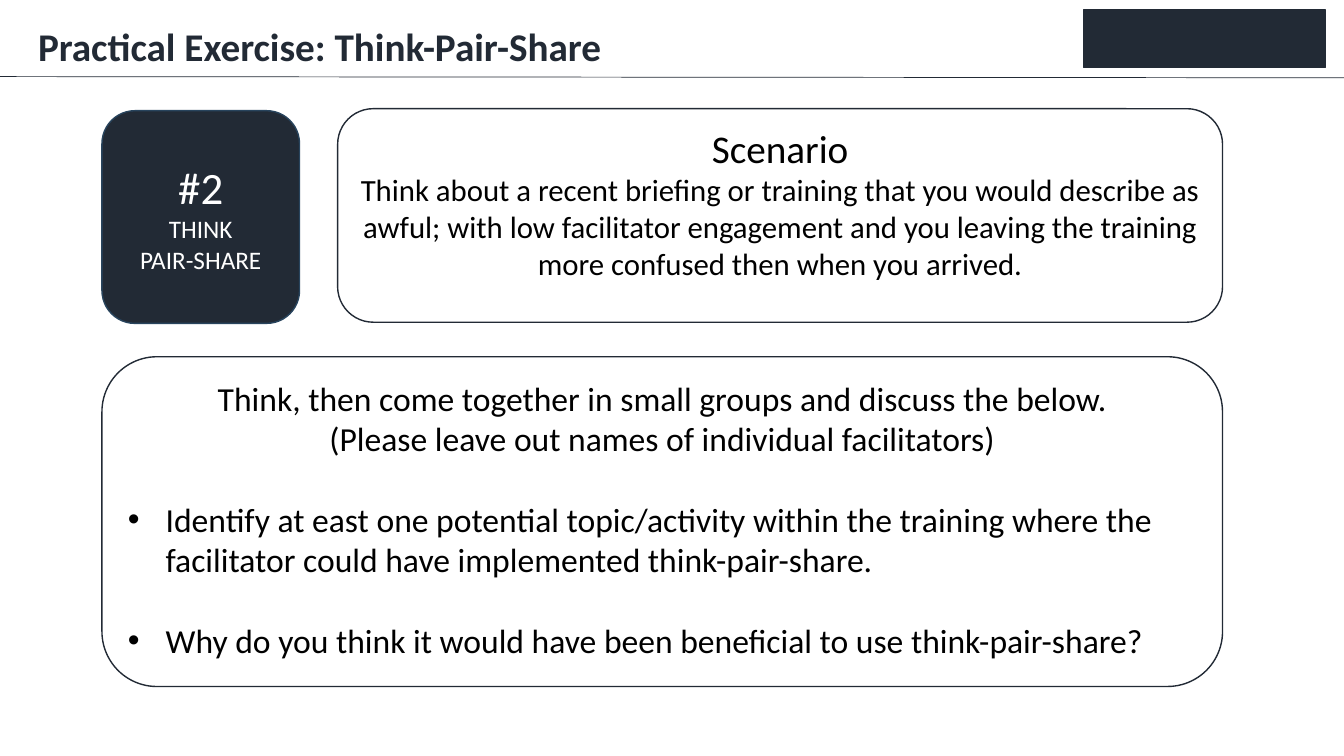
"""Build the think-pair-share exercise slide."""
from dataclasses import dataclass

from lxml.etree import SubElement as Sub
from pptx import Presentation as Deck
from pptx.dml.color import RGBColor as Rgb
from pptx.enum.shapes import MSO_CONNECTOR as Link, MSO_SHAPE as Form
from pptx.enum.text import MSO_ANCHOR as Anchor, PP_ALIGN as Align
from pptx.oxml.ns import qn
from pptx.util import Cm, Pt


@dataclass(frozen=True)
class Theme:
    navy: Rgb = Rgb(0x22, 0x2A, 0x35)
    edge: Rgb = Rgb(0x28, 0x44, 0x5D)
    black: Rgb = Rgb(0, 0, 0)
    white: Rgb = Rgb(255, 255, 255)
    font: str = "Calibri"
    huge: int = 32
    title: int = 28
    task: int = 24
    scene: int = 22
    label: int = 18
    gap: int = 29


THEME = Theme()


def write(frame, lines, color, align=Align.CENTER, bold=None):
    """Fill a text frame with (text, size) lines in one style."""
    frame.word_wrap = True
    frame.text = "\n".join(text for text, size in lines)
    for para, (text, size) in zip(frame.paragraphs, lines):
        para.alignment = align
        face = para.runs[0].font
        face.name, face.size, face.color.rgb = THEME.font, Pt(size), color
        face.bold = bold


def title(slide, box, text):
    """Add the bold slide title."""
    frame = slide.shapes.add_textbox(*map(Cm, box)).text_frame
    write(frame, [(text, THEME.title)], THEME.navy, align=Align.LEFT, bold=True)


def block(slide, form, box, fill=None, edge=THEME.navy):
    """Add a shape with a thin outline and an optional fill."""
    shape = slide.shapes.add_shape(form, *map(Cm, box))
    shape.shadow.inherit = False
    if fill is None:
        shape.fill.background()
    else:
        shape.fill.solid()
        shape.fill.fore_color.rgb = fill
    shape.line.color.rgb, shape.line.width = edge, Pt(1)
    return shape


def panel(slide, box, lines, color=THEME.black, anchor=Anchor.TOP, **style):
    """Add a rounded panel and return its text frame."""
    frame = block(slide, Form.ROUNDED_RECTANGLE, box, **style).text_frame
    frame.vertical_anchor = anchor
    write(frame, lines, color)
    return frame


def bullet(para):
    """Turn a paragraph into a spaced bullet with a hanging indent."""
    para.alignment = Align.LEFT
    para.space_before = Pt(THEME.gap)
    props = para._p.get_or_add_pPr()
    props.set("marL", str(Cm(0.95)))
    props.set("indent", str(Cm(-0.95)))
    Sub(props, qn("a:buFont")).set("typeface", "Arial")
    Sub(props, qn("a:buChar")).set("char", "•")


def rule(slide, ends):
    """Draw the thin line below the header."""
    line = slide.shapes.add_connector(Link.STRAIGHT, *map(Cm, ends))
    line.line.color.rgb, line.line.width = THEME.navy, Pt(0.5)
    Sub(line._element.spPr, qn("a:effectLst"))


def main():
    """Compose and save the slide."""
    deck = Deck()
    deck.slide_width, deck.slide_height = Cm(33.87), Cm(19.05)
    slide = deck.slides.add_slide(deck.slide_layouts[6])

    block(slide, Form.RECTANGLE, (27.3, 0.25, 6.1, 1.45), fill=THEME.navy)
    title(slide, (0.71, 0.43, 26.4, 1.45), "Practical Exercise: Think-Pair-Share")
    rule(slide, (0, 1.93, 33.87, 1.96))

    panel(slide, (2.57, 2.79, 4.98, 5.36), [
        ("#2", THEME.huge),
        ("THINK", THEME.label),
        ("PAIR-SHARE", THEME.label),
    ], color=THEME.white, anchor=Anchor.MIDDLE, fill=THEME.navy, edge=THEME.edge)
    panel(slide, (8.51, 2.74, 22.3, 5.38), [
        ("Scenario", THEME.title),
        ("Think about a recent briefing or training that you would describe as awful; "
         "with low facilitator engagement and you leaving the training more confused "
         "then when you arrived.", THEME.scene),
    ])
    tasks = panel(slide, (2.57, 8.99, 28.24, 8.31), [(text, THEME.task) for text in (
        "Think, then come together in small groups and discuss the below.",
        "(Please leave out names of individual facilitators)",
        "Identify at east one potential topic/activity within the training where "
        "the facilitator could have implemented think-pair-share.",
        "Why do you think it would have been beneficial to use think-pair-share?",
    )])
    for para in tasks.paragraphs[2:]:
        bullet(para)

    deck.save("out.pptx")


if __name__ == "__main__":
    main()
